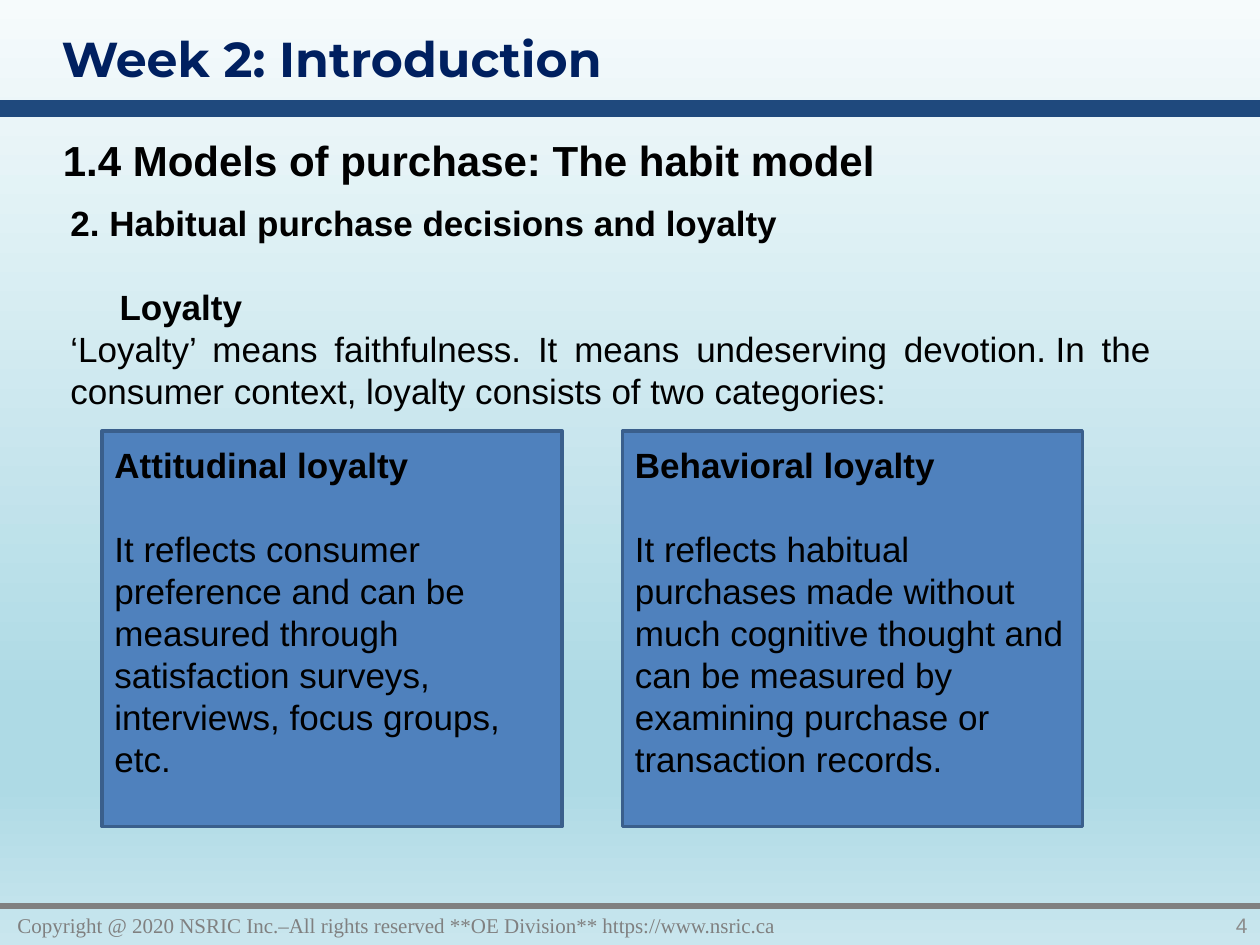
"""Build the slide on habitual purchase and the two categories of loyalty."""
from lxml import etree
from pptx import Presentation
from pptx.dml.color import RGBColor
from pptx.enum.shapes import MSO_CONNECTOR as CONN, MSO_SHAPE as SHAPE
from pptx.enum.text import MSO_ANCHOR as ANCHOR, PP_ALIGN as ALIGN
from pptx.oxml import parse_xml
from pptx.oxml.ns import nsdecls, qn
from pptx.util import Inches, Pt

BLACK = RGBColor(0x00, 0x00, 0x00)
NAVY = RGBColor(0x00, 0x20, 0x60)
BAR = RGBColor(0x1F, 0x49, 0x7D)
GRAY = RGBColor(0x80, 0x80, 0x80)
NUMBER = RGBColor(0x8C, 0x8C, 0x8C)
BLUE = RGBColor(0x4F, 0x81, 0xBD)
EDGE = RGBColor(0x3A, 0x5F, 0x8C)
STOPS = [(0, "F6FBFC"), (74, "AEDAE5"), (83, "AEDAE5"), (100, "C9E6EE")]


def write(p, text, size, color=BLACK, name="Arial", bold=False, align=ALIGN.LEFT):
    p.text = text
    p.alignment = align
    p.font.size = Pt(size)
    p.font.name = name
    p.font.bold = bold
    p.font.color.rgb = color


def add_text(left, top, width, height, anchor=ANCHOR.TOP):
    tf = s.shapes.add_textbox(Inches(left), Inches(top), Inches(width), Inches(height)).text_frame
    tf.word_wrap = True
    tf.vertical_anchor = anchor
    return tf


prs = Presentation()
prs.slide_width, prs.slide_height = Inches(10), Inches(7.5)
s = prs.slides.add_slide(prs.slide_layouts[6])

fill = s.background.fill
fill.gradient()
grad = s.background._cSld.find(".//" + qn("a:gradFill"))
stops = "".join(f'<a:gs pos="{pos * 1000}"><a:srgbClr val="{c}"/></a:gs>' for pos, c in STOPS)
grad.replace(grad.find(qn("a:gsLst")), parse_xml(f'<a:gsLst {nsdecls("a")}>{stops}</a:gsLst>'))
fill.gradient_angle = 270

for y, color, weight in [(0.86, BAR, 10), (7.19, GRAY, 3)]:
    line = s.shapes.add_connector(CONN.STRAIGHT, 0, Inches(y), Inches(10), Inches(y))
    line.line.color.rgb = color
    line.line.width = Pt(weight)
    etree.SubElement(line._element.spPr, qn("a:effectLst"))

tf = add_text(0.04, 7.19, 8.27, 0.31, ANCHOR.MIDDLE)
write(tf.paragraphs[0], "Copyright @ 2020 NSRIC Inc.–All rights reserved **OE Division** https://www.nsric.ca",
      12, GRAY, "Times New Roman")
tf = add_text(8.59, 7.19, 1.41, 0.31, ANCHOR.MIDDLE)
write(tf.paragraphs[0], "4", 12, NUMBER, align=ALIGN.RIGHT)
tf = add_text(0.4, 1.02, 9.19, 0.5)
write(tf.paragraphs[0], "1.4 Models of purchase: The habit model", 24, bold=True)
tf = add_text(0.39, 0.18, 6.95, 0.57)
write(tf.paragraphs[0], "Week 2: Introduction", 28, NAVY, "Montserrat", True)

tf = add_text(0.46, 1.55, 8.78, 1.8)
p = tf.paragraphs[0]
write(p, "2. Habitual purchase decisions and loyalty", 20, bold=True, align=ALIGN.JUSTIFY)
p = tf.add_paragraph()
p._p.get_or_add_pPr().set("marL", str(Inches(0.39)))
write(p, "Loyalty", 20, bold=True, align=ALIGN.JUSTIFY)
p.space_before = Pt(24)
p = tf.add_paragraph()
write(p, "‘Loyalty’ means faithfulness. It means undeserving devotion.\u00a0In the consumer context, "
         "loyalty consists of two categories:", 20, align=ALIGN.JUSTIFY)

CARDS = [
    ("Attitudinal loyalty", "It reflects consumer preference and can be measured through "
                            "satisfaction surveys, interviews, focus groups, etc."),
    ("Behavioral loyalty", "It reflects habitual purchases made without much cognitive thought "
                           "and can be measured by examining purchase or transaction records."),
]
for i, (heading, body) in enumerate(CARDS):
    sp = s.shapes.add_shape(SHAPE.RECTANGLE, Inches(0.81 + 4.13 * i), Inches(3.42), Inches(3.65), Inches(3.14))
    sp.shadow.inherit = False
    sp.fill.solid()
    sp.fill.fore_color.rgb = BLUE
    sp.line.color.rgb = EDGE
    sp.line.width = Pt(2)
    tf = sp.text_frame
    tf.word_wrap = True
    tf.vertical_anchor = ANCHOR.TOP
    tf.margin_top = Inches(0.1)
    write(tf.paragraphs[0], heading, 20, bold=True)
    p = tf.add_paragraph()
    write(p, body, 20)
    p.space_before = Pt(24)

prs.save("out.pptx")
